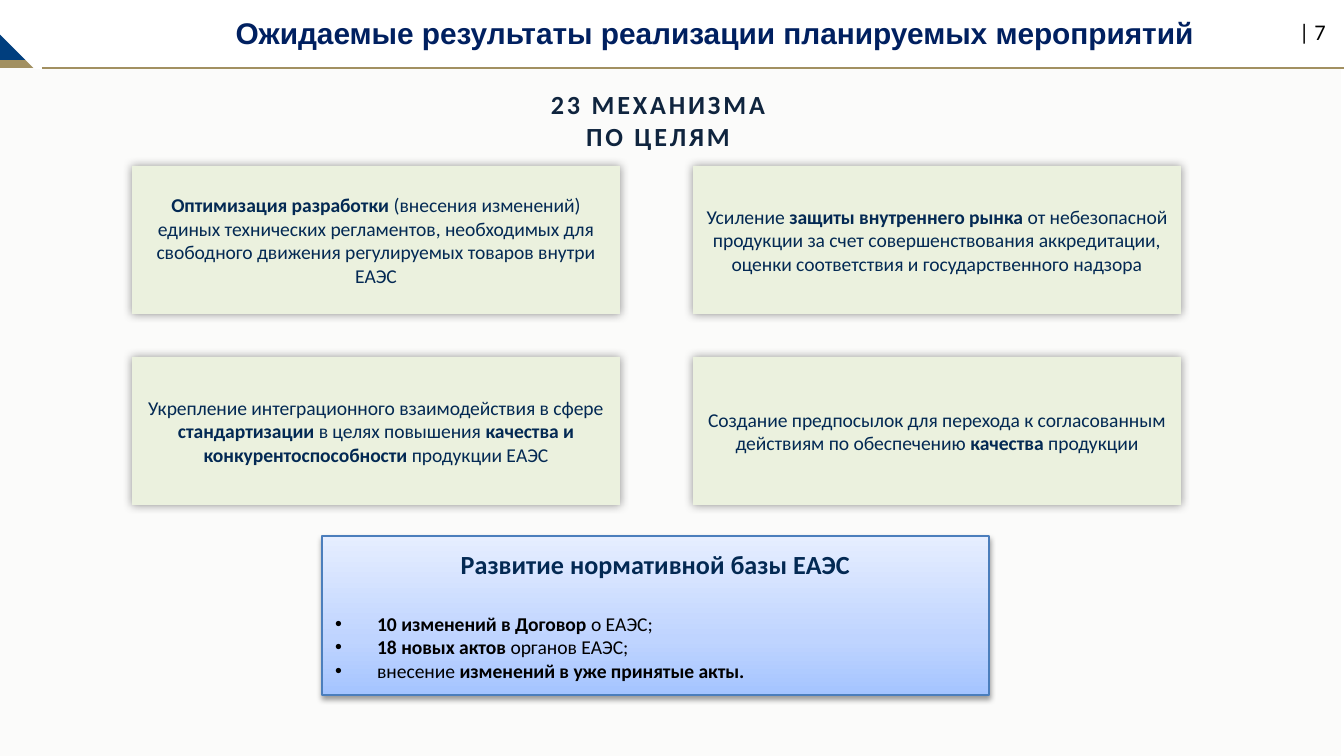
"""Build the slide on expected results of the planned measures."""
from copy import deepcopy
from dataclasses import dataclass

from lxml.etree import SubElement
from pptx import Presentation
from pptx.dml.color import RGBColor
from pptx.enum.shapes import MSO_CONNECTOR as Connector, MSO_SHAPE as Shape
from pptx.enum.text import MSO_ANCHOR as Anchor, PP_ALIGN as Align
from pptx.oxml.ns import qn
from pptx.util import Pt

EMU_PER_PX = 914400 / 134.4
WHITE = RGBColor(0xFF, 0xFF, 0xFF)
BLACK = RGBColor(0x00, 0x00, 0x00)
PAPER = RGBColor(0xEE, 0xEB, 0xE7)
GOLD = RGBColor(0xA2, 0x90, 0x61)
BLUE = RGBColor(0x00, 0x3E, 0x7E)
TITLE_NAVY = RGBColor(0x00, 0x20, 0x60)
HEADING_NAVY = RGBColor(0x0F, 0x24, 0x3E)
TEXT_NAVY = RGBColor(0x03, 0x29, 0x53)
PALE_GREEN = RGBColor(0xEB, 0xF1, 0xDE)
BORDER_BLUE = RGBColor(0x4B, 0x7E, 0xBC)
BASE_STOPS = (
    (0, RGBColor(0xA4, 0xC4, 0xFF)),
    (0.35, RGBColor(0xBF, 0xD4, 0xFF)),
    (1, RGBColor(0xE6, 0xEE, 0xFF)),
)


@dataclass(frozen=True)
class Box:
    left: int
    top: int
    width: int
    height: int

    def emu(self) -> list[int]:
        return [px(n) for n in (self.left, self.top, self.width, self.height)]


@dataclass(frozen=True)
class Style:
    size: float
    color: RGBColor
    name: str = "Calibri"
    align: Align = Align.CENTER


@dataclass(frozen=True)
class Card:
    column: int
    row: int
    text: str


TITLE = Style(16, TITLE_NAVY, "Arial")
PAGE = Style(12, BLACK, align=Align.RIGHT)
HEADING = Style(14, HEADING_NAVY)
CARD = Style(10.5, TEXT_NAVY)
BASE_HEADING = Style(14, TEXT_NAVY)
BULLET = Style(10.5, BLACK, align=Align.LEFT)

CARDS = (
    Card(0, 0, "**Оптимизация разработки** (внесения изменений) единых технических регламентов, "
               "необходимых для свободного движения регулируемых товаров внутри ЕАЭС"),
    Card(1, 0, "Усиление **защиты внутреннего рынка** от небезопасной продукции за счет "
               "совершенствования аккредитации, оценки соответствия и государственного надзора"),
    Card(0, 1, "Укрепление интеграционного взаимодействия в сфере **стандартизации** в целях "
               "повышения **качества и конкурентоспособности** продукции ЕАЭС"),
    Card(1, 1, "Создание предпосылок для перехода к согласованным действиям по обеспечению "
               "**качества** продукции"),
)
BASE_BULLETS = (
    "**10 изменений в Договор** о ЕАЭС;",
    "**18 новых актов** органов ЕАЭС;",
    "внесение **изменений в уже принятые акты.**",
)


def px(length: int) -> int:
    return round(length * EMU_PER_PX)


def add_block(shapes, box: Box, color: RGBColor, kind: Shape = Shape.RECTANGLE):
    block = shapes.add_shape(kind, *box.emu())
    block.shadow.inherit = False
    block.fill.solid()
    block.fill.fore_color.rgb = color
    block.line.fill.background()
    return block


def add_text_area(shapes, box: Box, anchor: Anchor):
    area = shapes.add_textbox(*box.emu()).text_frame
    area.word_wrap = True
    area.vertical_anchor = anchor
    return area


def write(paragraph, text: str, style: Style) -> None:
    """Write text whose bold parts stand between double asterisks."""
    paragraph.alignment = style.align
    font = paragraph.font
    font.size, font.name = Pt(style.size), style.name
    font.color.rgb = style.color
    parts = text.split("**")
    for index, part in enumerate(parts):
        if part:
            run = paragraph.add_run()
            run.text = part
            if len(parts) > 1:
                run.font.bold = index % 2 == 1


def add_bullet(paragraph) -> None:
    properties = paragraph._p.get_or_add_pPr()
    properties.set("marL", str(px(42)))
    properties.set("indent", str(px(-42)))
    SubElement(properties, qn("a:buFont"), typeface="Arial")
    SubElement(properties, qn("a:buChar"), char="•")


def cast_shadow(shape, opacity: int, blur: float, distance: float, degrees: int) -> None:
    effects = shape._element.spPr.find(qn("a:effectLst"))
    shadow = SubElement(effects, qn("a:outerShdw"), blurRad=str(Pt(blur)), dist=str(Pt(distance)),
                        dir=str(degrees * 60000), rotWithShape="0")
    color = SubElement(shadow, qn("a:srgbClr"), val=str(BLACK))
    SubElement(color, qn("a:alpha"), val=str(opacity * 1000))


def add_header(shapes) -> None:
    backdrop = add_block(shapes, Box(-3, 0, 1344, 756), PAPER)
    tint = backdrop._element.spPr.find(qn("a:solidFill"))[0]
    SubElement(tint, qn("a:alpha"), val="20000")
    add_block(shapes, Box(0, 13, 85, 55), GOLD)
    add_block(shapes, Box(0, 5, 85, 55), BLUE)
    band = add_block(shapes, Box(0, 0, 1344, 69), WHITE, Shape.SNIP_1_RECTANGLE)
    band.adjustments[0] = 0.5
    band.rotation = 180
    rule = shapes.add_connector(Connector.STRAIGHT, px(42), px(68), px(1344), px(68))
    rule.line.color.rgb = GOLD
    rule.line.width = Pt(0.75)
    SubElement(rule._element.spPr, qn("a:effectLst"))

    title = add_text_area(shapes, Box(207, 0, 1016, 71), Anchor.MIDDLE).paragraphs[0]
    write(title, "Ожидаемые результаты реализации планируемых мероприятий", TITLE)
    title.font.bold = True
    title.line_spacing = 0.8
    page = add_text_area(shapes, Box(1230, 4, 109, 56), Anchor.MIDDLE).paragraphs[0]
    write(page, "| 7", PAGE)


def add_base(shapes) -> None:
    base = add_block(shapes, Box(322, 536, 667, 159), WHITE)
    base.fill.gradient()
    base.fill.gradient_angle = 90
    stop_list = base._element.spPr.find(".//" + qn("a:gsLst"))
    stop_list.append(deepcopy(stop_list[-1]))
    for stop, (position, color) in zip(base.fill.gradient_stops, BASE_STOPS):
        stop.position = position
        stop.color.rgb = color
    base.line.color.rgb = BORDER_BLUE
    base.line.width = Pt(0.75)
    cast_shadow(base, 38, 3.1, 1.6, 90)

    frame = base.text_frame
    frame.vertical_anchor = Anchor.MIDDLE
    write(frame.paragraphs[0], "Развитие нормативной базы ЕАЭС", BASE_HEADING)
    frame.paragraphs[0].font.bold = True
    frame.paragraphs[0].space_after = Pt(17)
    for text in BASE_BULLETS:
        paragraph = frame.add_paragraph()
        add_bullet(paragraph)
        write(paragraph, text, BULLET)


def add_heading(shapes) -> None:
    frame = add_text_area(shapes, Box(418, 82, 480, 77), Anchor.TOP)
    for paragraph, text in zip((frame.paragraphs[0], frame.add_paragraph()),
                               ("23 МЕХАНИЗМА", "ПО ЦЕЛЯМ")):
        write(paragraph, text, HEADING)
        paragraph.font.bold = True
        paragraph.runs[0].font._element.set("spc", "150")


def add_card(shapes, card: Card) -> None:
    block = add_block(shapes, Box(132 + 561 * card.column, 166 + 191 * card.row, 488, 148), PALE_GREEN)
    cast_shadow(block, 40, 5, 0, 0)
    block.text_frame.vertical_anchor = Anchor.MIDDLE
    write(block.text_frame.paragraphs[0], card.text, CARD)


def main() -> None:
    deck = Presentation()
    deck.slide_width, deck.slide_height = px(1344), px(756)
    shapes = deck.slides.add_slide(deck.slide_layouts[6]).shapes
    add_header(shapes)
    add_base(shapes)
    add_heading(shapes)
    for card in CARDS:
        add_card(shapes, card)
    deck.save("out.pptx")


if __name__ == "__main__":
    main()
